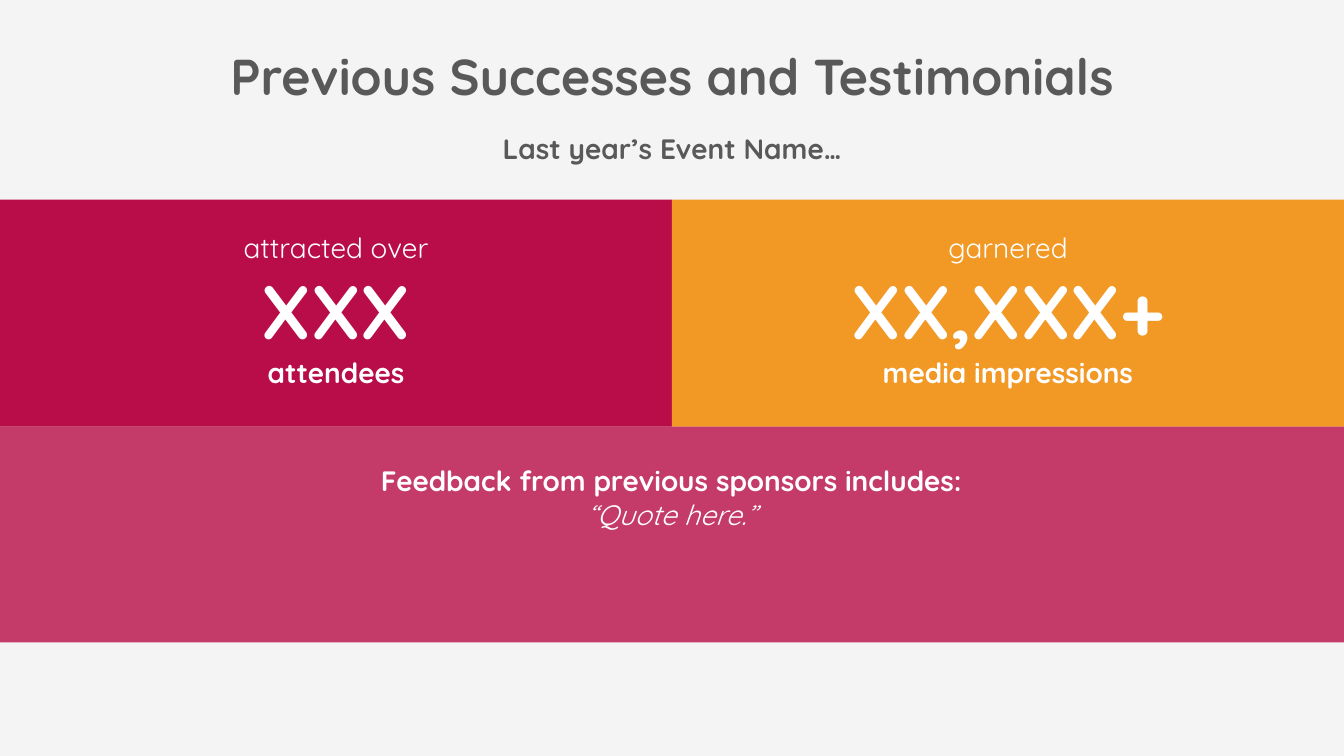
import pptx
import pptx.util
import pptx.dml.color
import pptx.enum.shapes
import pptx.enum.text
import pptx.oxml
import pptx.oxml.ns
from pptx.util import Cm

FONT = "Quicksand"
GREY, WHITE, CRIMSON, ORANGE, PALE = "595959", "FFFFFF", "B80D48", "F29824", "F4F4F4"
WIDTH, HEIGHT = 33.87, 19.05
HALF = WIDTH / 2
STATS_TOP, STATS_HEIGHT = 5.03, 5.72


def rgb(value):
    return pptx.dml.color.RGBColor.from_string(value)


def add_band(s, left, top, width, height, color, opacity=100):
    """Add a borderless block of colour."""
    kind = pptx.enum.shapes.MSO_SHAPE.ROUNDED_RECTANGLE
    sp = s.shapes.add_shape(kind, Cm(left), Cm(top), Cm(width), Cm(height))
    sp.adjustments[0] = 0
    sp.shadow.inherit = False
    sp.line.fill.background()
    sp.fill.solid()
    sp.fill.fore_color.rgb = rgb(color)
    if opacity < 100:
        clr = sp.fill._xPr.find(".//" + pptx.oxml.ns.qn("a:srgbClr"))
        alpha = pptx.oxml.parse_xml(
            f'<a:alpha {pptx.oxml.ns.nsdecls("a")} val="{opacity * 1000}"/>')
        clr.append(alpha)


def add_text(p, text, size=20, color=WHITE, bold=False, italic=False):
    """Add a formatted run to a centred paragraph."""
    p.alignment = pptx.enum.text.PP_ALIGN.CENTER
    r = p.add_run()
    r.text = text
    r.font.name = FONT
    r.font.size = pptx.util.Pt(size)
    r.font.color.rgb = rgb(color)
    r.font.bold = bold
    r.font.italic = italic


def place(sp, left, top, width, height):
    """Position a text shape and return its wrapped, top-anchored frame."""
    sp.left, sp.top, sp.width, sp.height = Cm(left), Cm(top), Cm(width), Cm(height)
    tf = sp.text_frame
    tf.word_wrap = True
    tf.auto_size = pptx.enum.text.MSO_AUTO_SIZE.SHAPE_TO_FIT_TEXT
    tf.vertical_anchor = pptx.enum.text.MSO_ANCHOR.TOP
    return tf


def add_box(s, left, top, width, height):
    return place(s.shapes.add_textbox(0, 0, 0, 0), left, top, width, height)


def add_stat(s, left, color, lead, figure, unit):
    """Add a coloured panel with a large figure between two captions."""
    add_band(s, left, STATS_TOP, HALF, STATS_HEIGHT, color)
    tf = add_box(s, left, 5.69, HALF, 4.27)
    add_text(tf.paragraphs[0], lead)
    p = tf.add_paragraph()
    add_text(p, figure, size=54, bold=True)
    p.add_line_break()
    add_text(p, unit, bold=True)


def main():
    prs = pptx.Presentation()
    prs.slide_width, prs.slide_height = Cm(WIDTH), Cm(HEIGHT)
    s = prs.slides.add_slide(prs.slide_layouts[5])
    s.background.fill.solid()
    s.background.fill.fore_color.rgb = rgb(PALE)

    # Heading
    tf = place(s.shapes.title, 4.35, 1.02, 25.17, 1.8)
    add_text(tf.paragraphs[0], "Previous Successes and Testimonials",
             size=36, color=GREY, bold=True)
    tf = add_box(s, 8.47, 3.2, HALF, 1.11)
    add_text(tf.paragraphs[0], "Last year’s Event Name…", color=GREY, bold=True)

    # Key figures
    add_stat(s, 0, CRIMSON, "attracted over", "XXX", "attendees")
    add_stat(s, HALF, ORANGE, "garnered", "XX,XXX+", "media impressions")

    # Sponsor feedback
    add_band(s, 0, STATS_TOP + STATS_HEIGHT, WIDTH, 5.44, CRIMSON, opacity=80)
    tf = add_box(s, 7.17, 11.56, 19.51, 1.96)
    add_text(tf.paragraphs[0], "Feedback from previous sponsors includes:", bold=True)
    add_text(tf.add_paragraph(), "“Quote here.”", italic=True)

    prs.save("out.pptx")


if __name__ == "__main__":
    main()
